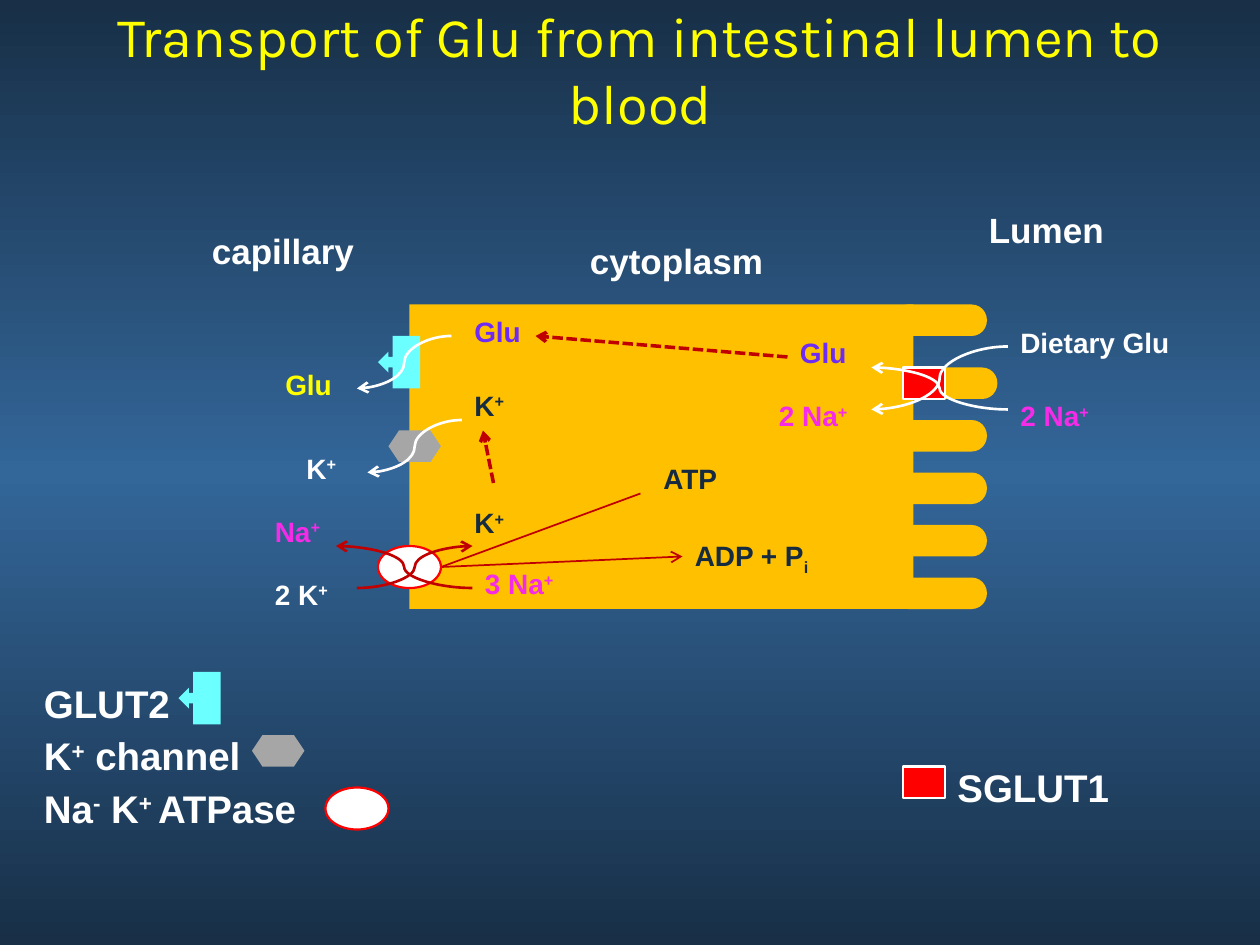
from copy import deepcopy
from dataclasses import dataclass
from typing import Any

from lxml import etree
from pptx import Presentation
from pptx.dml.color import RGBColor
from pptx.enum.dml import MSO_LINE
from pptx.enum.shapes import MSO_CONNECTOR, MSO_SHAPE
from pptx.enum.text import MSO_ANCHOR, MSO_AUTO_SIZE, PP_ALIGN
from pptx.oxml.ns import qn
from pptx.util import Inches, Pt

RECT, OVAL = MSO_SHAPE.RECTANGLE, MSO_SHAPE.OVAL
CALLOUT = MSO_SHAPE.LEFT_ARROW_CALLOUT
HEXAGON = MSO_SHAPE.FLOWCHART_PREPARATION
CAPSULE = MSO_SHAPE.FLOWCHART_TERMINATOR
CURVE, STRAIGHT = MSO_CONNECTOR.CURVE, MSO_CONNECTOR.STRAIGHT
DASH = MSO_LINE.SQUARE_DOT
GROW, FIXED = MSO_AUTO_SIZE.SHAPE_TO_FIT_TEXT, MSO_AUTO_SIZE.NONE
MIDDLE, CENTER = MSO_ANCHOR.MIDDLE, PP_ALIGN.CENTER
COLS, ROWS, UNIT = 120, 90, Inches(1) // 12
SUP, SUB = "30000", "-25000"


@dataclass(frozen=True)
class Theme:
    """Colours, fonts and type sizes."""
    edge: str = "182F47"
    middle: str = "336699"
    yellow: str = "FFFF00"
    white: str = "FFFFFF"
    dark: str = "162A40"
    glucose: str = "6E2BF5"
    sodium: str = "F52BE7"
    cell: str = "FFC000"
    glut2: str = "6CFFFF"
    channel: str = "A6A6A6"
    red: str = "FF0000"
    arrow: str = "C00000"
    title_font: str = "Karla"
    body_font: str = "Arial"
    title: int = 32
    legend: int = 22
    heading: int = 20
    label: int = 16


T = Theme()
GLUT2 = (CALLOUT, 4, 5, T.glut2, None)
CHANNEL = (HEXAGON, 5, 3, T.channel, None)
PUMP = (OVAL, 6, 4, T.white, T.red)
SGLUT1 = (RECT, 4, 3, T.red, T.white)
VILLUS = (CAPSULE, 9, 3, T.cell, None)
CELL = (RECT, 48, 29, T.cell, None)


def rgb(color):
    """Turn a hex string into a colour."""
    return RGBColor.from_string(color)


def style(r, font, size, color, bold=None):
    """Format one run."""
    r.font.name, r.font.size, r.font.bold = font, Pt(size), bold
    r.font.color.rgb = rgb(color)


@dataclass
class Box:
    """A region of the slide grid whose parts are placed from its corner."""
    s: Any
    col: int
    row: int

    def at(self, x, y):
        """Convert a cell of the region to slide lengths."""
        return int((self.col + x) * UNIT), int((self.row + y) * UNIT)

    def shape(self, kind, x, y):
        """Draw one kind of cell part or transporter."""
        preset, w, h, fill, outline = kind
        sp = self.s.shapes.add_shape(preset, *self.at(x, y), w * UNIT, h * UNIT)
        sp.shadow.inherit = False
        sp.fill.solid()
        sp.fill.fore_color.rgb = rgb(fill)
        if outline:
            sp.line.color.rgb, sp.line.width = rgb(outline), Pt(1.25)
        else:
            sp.line.fill.background()

    def text(self, x, y, w, color, *parts, size=T.label, shift=SUP):
        """Write a label in which every second part is raised or lowered."""
        tb = self.s.shapes.add_textbox(*self.at(x, y), w * UNIT, Inches(0.1) + Pt(size))
        tf = tb.text_frame
        tf.word_wrap, tf.auto_size = True, GROW
        p = tf.paragraphs[0]
        p.line_spacing = 0.8
        for i, part in enumerate(parts):
            r = p.add_run()
            r.text = part
            style(r, T.body_font, size, color, True)
            if i % 2:
                r.font._element.set("baseline", shift)

    def line(self, start, end, color=T.arrow, width=1.5, kind=CURVE, dash=None, head=True):
        """Connect two cells, with an arrowhead at the end."""
        c = self.s.shapes.add_connector(kind, *self.at(*start), *self.at(*end))
        c.line.color.rgb, c.line.width = rgb(color), Pt(width)
        if dash:
            c.line.dash_style = dash
        if head:
            etree.SubElement(c.line._get_or_add_ln(), qn("a:tailEnd"), type="arrow")
        etree.SubElement(c._element.spPr, qn("a:effectLst"))


def background(s):
    """Fill the slide with a gradient that is lightest halfway down."""
    fill = s.background.fill
    fill.gradient()
    fill.gradient_angle = 90
    first, last = s.element.xpath(".//p:bg//a:gs")
    first.addnext(deepcopy(first))
    for stop, color, pos in zip(fill.gradient_stops, (T.edge, T.middle, T.edge), (0, 0.5, 1)):
        stop.color.rgb, stop.position = rgb(color), pos


def title(box, w, h):
    """Place the slide title."""
    sp = box.s.shapes.title
    sp.left, sp.top = box.at(0, 0)
    sp.width, sp.height = w * UNIT, h * UNIT
    tf = sp.text_frame
    tf.word_wrap, tf.auto_size, tf.vertical_anchor = True, FIXED, MIDDLE
    p = tf.paragraphs[0]
    p.alignment = CENTER
    r = p.add_run()
    r.text = "Transport of Glu from intestinal lumen to blood"
    style(r, T.title_font, T.title, T.yellow)


def cytoplasm(box):
    """Draw the cell with its microvilli and inner traffic."""
    box.text(16, 0, 19, T.white, "cytoplasm", size=T.heading)
    box.shape(CELL, 0, 6)
    for x, y in [(46, 6), (47, 12)] + [(46, 17 + 5 * i) for i in range(4)]:
        box.shape(VILLUS, x, y)
    for x, y in ((36, 9), (5, 7)):
        box.text(x, y, 7, T.glucose, "Glu")
    for x, y, ion in ((34, 15, "2 Na"), (6, 31, "3 Na")):
        box.text(x, y, 10, T.sodium, ion, "+")
    for y in (14, 25.2):
        box.text(5, y, 6, T.dark, "K", "+")
    box.text(23, 21, 8, T.dark, "ATP")
    box.text(26, 28, 18, T.dark, "ADP + P", "i", shift=SUB)
    box.line((3, 31), (22, 24), width=1, kind=STRAIGHT, head=False)
    box.line((3, 31), (26, 30), width=1, kind=STRAIGHT)
    for start, end in (((36, 11), (12, 9)), ((8, 23), (7, 18))):
        box.line(start, end, width=2, kind=STRAIGHT, dash=DASH)


def capillary(box):
    """Draw the blood side with GLUT2, the K+ channel and the pump."""
    box.text(0, 0, 19, T.white, "capillary", size=T.heading)
    for kind, x, y in ((GLUT2, 17, 10), (CHANNEL, 18, 19), (PUMP, 17, 30)):
        box.shape(kind, x, y)
    box.line((24, 10), (15, 15), T.white)
    box.line((25, 18), (16, 23), T.white)
    box.line((26, 34), (13, 30))
    box.line((15, 34), (26, 30))
    box.text(7, 13, 7, T.yellow, "Glu")
    box.text(9, 21, 6, T.white, "K", "+")
    box.text(6, 27, 7, T.sodium, "Na", "+")
    box.text(6, 33, 9, T.white, "2 K", "+")


def lumen(box):
    """Draw the gut side with SGLUT1 and its two inflows."""
    box.text(10, 0, 19, T.white, "Lumen", size=T.heading)
    box.shape(SGLUT1, 3, 15)
    box.line((13, 13), (0, 19), T.white)
    box.line((13, 19), (0, 15), T.white)
    box.text(13, 11, 17, T.white, "Dietary Glu")
    box.text(13, 18, 10, T.sodium, "2 Na", "+")


def legend(box, entries):
    """List transporter symbols with their names."""
    for kind, icon, x, y, w, parts in entries:
        box.shape(kind, *icon)
        box.text(x, y, w, T.white, *parts, size=T.legend)


def main():
    """Build and save the slide."""
    prs = Presentation()
    prs.slide_width, prs.slide_height = COLS * UNIT, ROWS * UNIT
    s = prs.slides.add_slide(prs.slide_layouts[5])
    background(s)
    title(Box(s, 4, 3), 114, 7)
    cytoplasm(Box(s, 39, 23))
    capillary(Box(s, 19, 22))
    lumen(Box(s, 83, 20))
    legend(Box(s, 3, 64), [
        (GLUT2, (14, 0), 0, 1, 15, ["GLUT2"]),
        (CHANNEL, (21, 6), 0, 6, 22, ["K", "+", " channel"]),
        (PUMP, (28, 11), 0, 11, 28, ["Na", "-", " K", "+ ", "ATPase"]),
    ])
    legend(Box(s, 86, 73), [(SGLUT1, (0, 0), 4, 0, 21, ["SGLUT1"])])
    prs.save("out.pptx")


if __name__ == "__main__":
    main()
